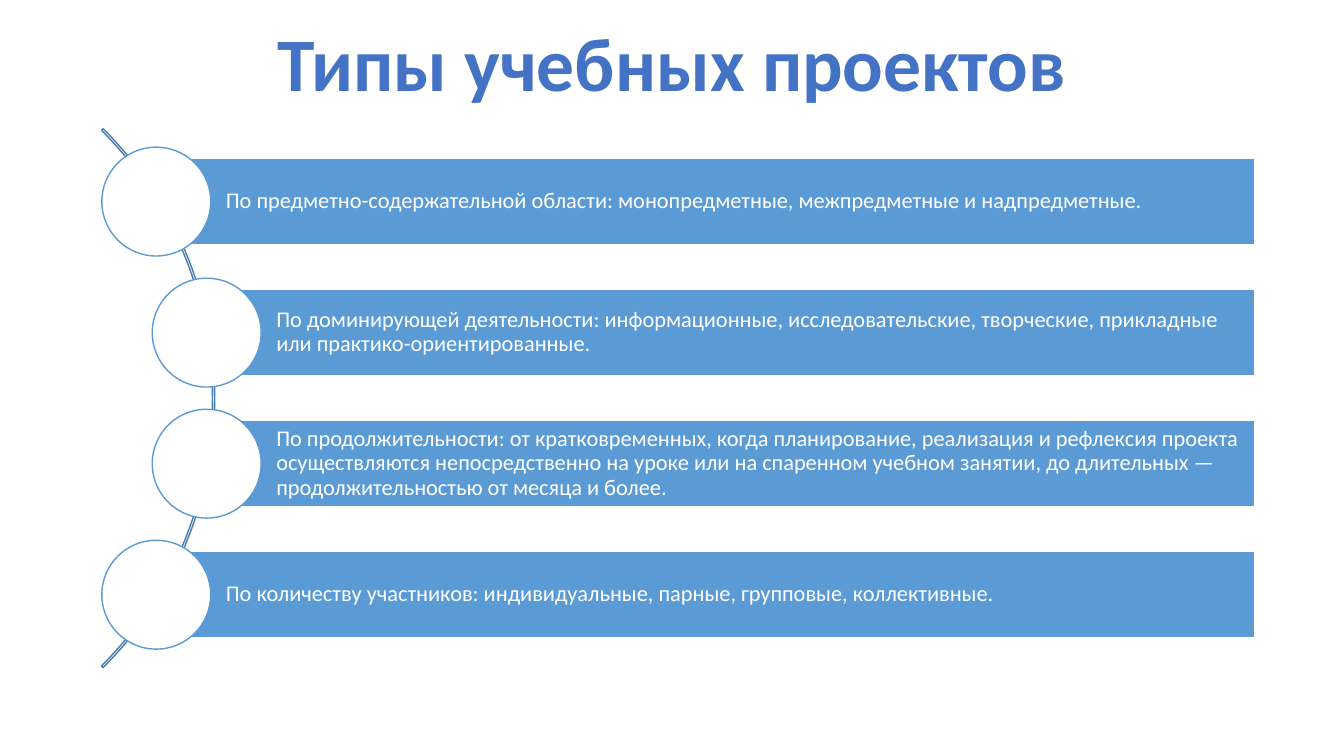
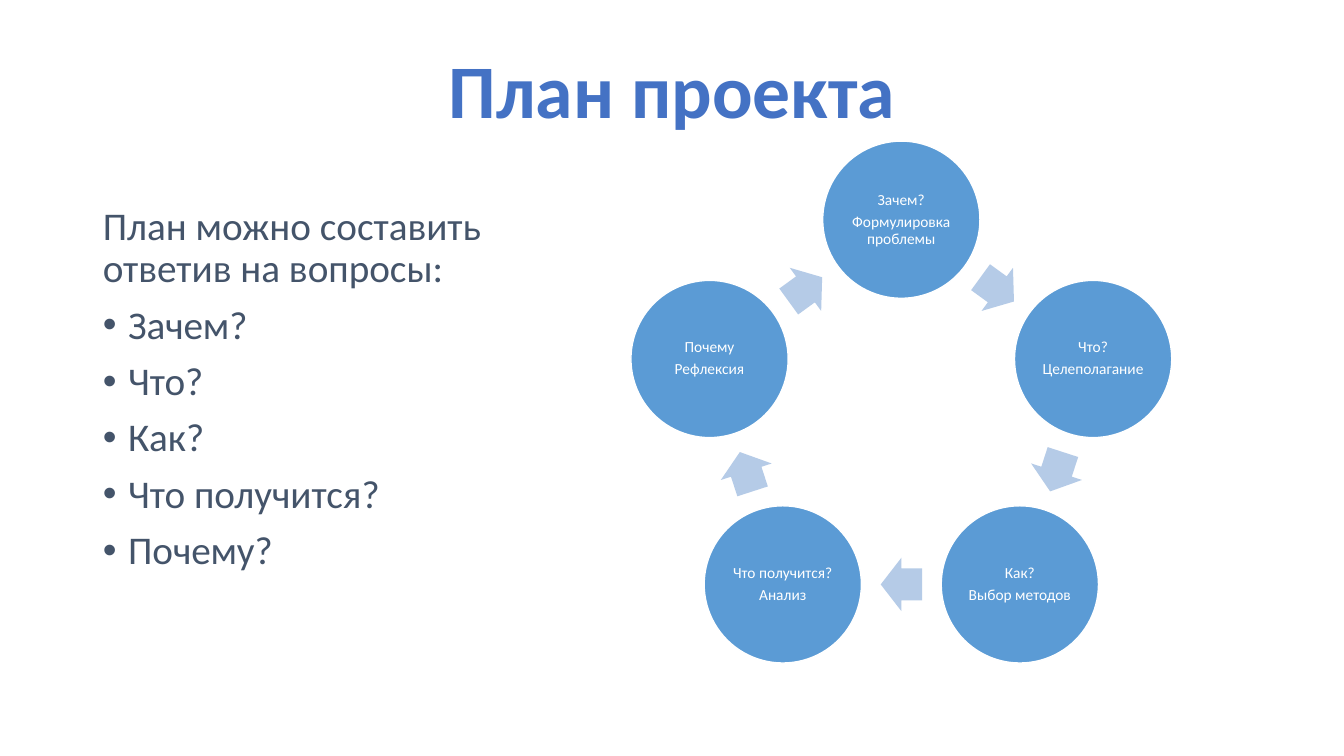
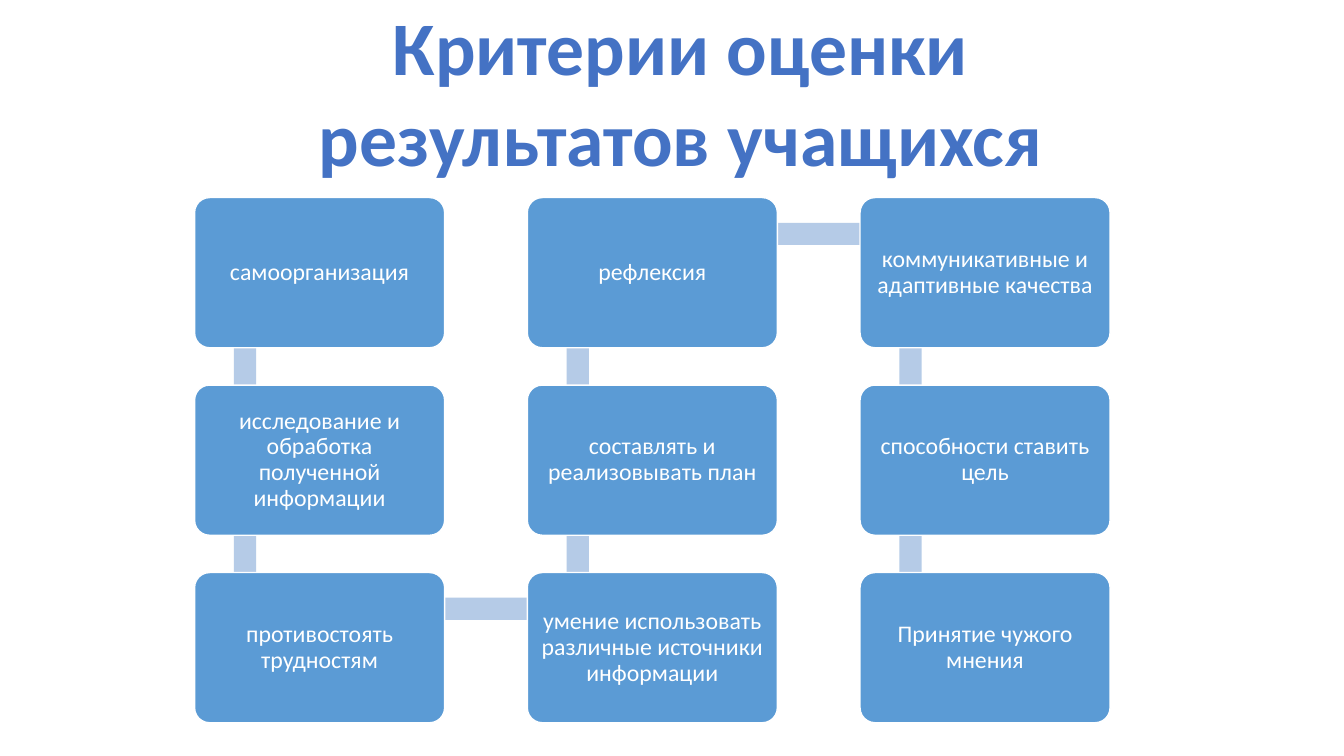
import math

import pptx
import pptx.dml.color
import pptx.enum.shapes
import pptx.enum.text
import pptx.util

Inches, Pt = pptx.util.Inches, pptx.util.Pt
SHAPE = pptx.enum.shapes.MSO_SHAPE
ALIGN = pptx.enum.text.PP_ALIGN
ANCHOR = pptx.enum.text.MSO_ANCHOR
AUTOSIZE = pptx.enum.text.MSO_AUTO_SIZE

# Shared style
WIDTH, HEIGHT = 13.33, 7.5
FONT = "Calibri"
COLORS = {
    "title": "4472C4",
    "body": "44546A",
    "accent": "5B9BD5",
    "pale": "B5CBE7",
    "arc": "497CAB",
    "white": "FFFFFF",
}
TITLE_ONLY, TITLE_AND_BODY = 5, 1

# Content
PROJECT_TYPES = [
    "По предметно-содержательной области: монопредметные, межпредметные и надпредметные.",
    "По доминирующей деятельности: информационные, исследовательские, творческие, "
    "прикладные или практико-ориентированные.",
    "По продолжительности: от кратковременных, когда планирование, реализация и рефлексия "
    "проекта осуществляются непосредственно на уроке или на спаренном учебном занятии, "
    "до длительных — продолжительностью от месяца и более.",
    "По количеству участников: индивидуальные, парные, групповые, коллективные.",
]
PLAN_INTRO = "План можно составить ответив на вопросы:"
PLAN_QUESTIONS = ["Зачем?", "Что?", "Как?", "Что получится?", "Почему?"]
PLAN_STAGES = [
    ["Зачем?", "Формулировка проблемы"],
    ["Что?", "Целеполагание"],
    ["Как?", "Выбор методов"],
    ["Что получится?", "Анализ"],
    ["Почему", "Рефлексия"],
]
CRITERIA = [
    ["самоорганизация", "рефлексия", "коммуникативные и адаптивные качества"],
    ["исследование и обработка полученной информации", "составлять и реализовывать план",
     "способности ставить цель"],
    ["противостоять трудностям", "умение использовать различные источники информации",
     "Принятие чужого мнения"],
]


def rgb(name):
    return pptx.dml.color.RGBColor.from_string(COLORS[name])


def style(p, size, color, align=ALIGN.LEFT, spacing=0.9):
    p.font.name, p.font.size = FONT, Pt(size)
    p.font.color.rgb = rgb(color)
    p.alignment, p.line_spacing = align, spacing


def place(sp, left, top, width, height):
    sp.left, sp.top = Inches(left), Inches(top)
    sp.width, sp.height = Inches(width), Inches(height)


def add_titled_slide(prs, layout, lines, center_y, center_x=WIDTH / 2):
    """Add a slide whose title is centred on the given point."""
    slide = prs.slides.add_slide(prs.slide_layouts[layout])
    title = slide.shapes.title
    width, height = 10, 0.1 + 0.91 * len(lines)
    place(title, center_x - width / 2, center_y - height / 2, width, height)
    tf = title.text_frame
    tf.text = "\n".join(lines)
    tf.word_wrap, tf.auto_size = True, AUTOSIZE.NONE
    tf.vertical_anchor = ANCHOR.MIDDLE
    for p in tf.paragraphs:
        style(p, 54, "title", ALIGN.CENTER, 1.0)
        p.font.bold = True
    return slide


def add_shape(slide, kind, box, fill=None, line=None, adjust=()):
    sp = slide.shapes.add_shape(kind, *(Inches(v) for v in box))
    sp.shadow.inherit = False
    for i, value in enumerate(adjust):
        sp.adjustments[i] = value
    if fill:
        sp.fill.solid()
        sp.fill.fore_color.rgb = rgb(fill)
    else:
        sp.fill.background()
    if line:
        sp.line.color.rgb = rgb(line)
        sp.line.width = Pt(1)
    else:
        sp.line.fill.background()
    return sp


def add_label(sp, lines, size, margin, left=None, align=ALIGN.CENTER):
    """Write white paragraphs inside a shape."""
    tf = sp.text_frame
    tf.text = "\n".join(lines)
    tf.word_wrap, tf.vertical_anchor = True, ANCHOR.MIDDLE
    tf.margin_top = tf.margin_right = tf.margin_bottom = Inches(margin)
    tf.margin_left = Inches(margin if left is None else left)
    for p in tf.paragraphs:
        style(p, size, "white", align)
        p.space_after = Pt(0.35 * size)


def add_question_list(slide, intro, questions):
    body = slide.placeholders[1]
    place(body, 0.92, 2, 4.21, 4.76)
    tf = body.text_frame
    tf.text = "\n".join([intro] + questions)
    tf.auto_size = AUTOSIZE.NONE
    for i, p in enumerate(tf.paragraphs):
        style(p, 28, "body")
        p.space_before = Pt(10)
        indent = Inches(0.25) if i else 0
        pPr = p._p.get_or_add_pPr()
        pPr.set("marL", str(indent))
        pPr.set("indent", str(-indent))
        if i:
            bullet = pptx.oxml.parse_xml(
                '<a:buChar xmlns:a="http://schemas.openxmlformats.org/drawingml/2006/main" char="•"/>')
        else:
            bullet = pptx.oxml.parse_xml(
                '<a:buNone xmlns:a="http://schemas.openxmlformats.org/drawingml/2006/main"/>')
        pPr.insert_element_before(bullet, "a:tabLst", "a:defRPr", "a:extLst")


def add_types_slide(prs):
    slide = add_titled_slide(prs, TITLE_ONLY, ["Типы учебных проектов"], 0.61)
    add_shape(slide, SHAPE.BLOCK_ARC, (-5.43, 0.17, 7.56, 7.56), line="arc",
              adjust=(189, 27, 0.003))
    right, bar_h, circle = 12.44, 0.86, 1.08
    for i, text in enumerate(PROJECT_TYPES):
        left = 2.05 if i in (1, 2) else 1.55
        middle = 2 + 1.3 * i
        bar = add_shape(slide, SHAPE.RECTANGLE,
                        (left, middle - bar_h / 2, right - left, bar_h), "accent", "white")
        add_label(bar, [text], 16, 0.04, left=0.69, align=ALIGN.LEFT)
        add_shape(slide, SHAPE.OVAL,
                  (left - circle / 2, middle - circle / 2, circle, circle), "white", "accent")


def add_plan_slide(prs):
    slide = add_titled_slide(prs, TITLE_AND_BODY, ["План проекта"], 0.88)
    add_question_list(slide, PLAN_INTRO, PLAN_QUESTIONS)

    # Ring of stages, clockwise from the top
    center_x, center_y, radius = 8.94, 4.18, 2
    step = 360 / len(PLAN_STAGES)

    def ring_box(angle, distance, width, height):
        x = center_x + distance * math.sin(math.radians(angle))
        y = center_y - distance * math.cos(math.radians(angle))
        return x - width / 2, y - height / 2, width, height

    for i, lines in enumerate(PLAN_STAGES):
        angle = i * step
        stage = add_shape(slide, SHAPE.OVAL, ring_box(angle, radius, 1.56, 1.56),
                          "accent", "white")
        add_label(stage, lines, 11, 0.02)
        midpoint = radius * math.cos(math.radians(step / 2))
        arrow = add_shape(slide, SHAPE.RIGHT_ARROW,
                          ring_box(angle + step / 2, midpoint, 0.41, 0.53),
                          "pale", adjust=(0.6, 0.5))
        arrow.rotation = angle + step / 2


def add_criteria_slide(prs):
    slide = add_titled_slide(prs, TITLE_ONLY, ["Критерии оценки", "результатов учащихся"],
                             0.9, 6.75)
    col_step, row_step, band = 3.3, 1.86, 0.22

    def cell(row, col):
        return 1.93 + col * col_step, 1.96 + row * row_step

    # Links run down, up and down the columns, behind the boxes
    for col in range(3):
        for row in range(2):
            x, y = cell(row, col)
            add_shape(slide, SHAPE.RECTANGLE, (x + 0.39, y + 0.36, band, row_step), "pale")
    for row, col in ((2, 0), (0, 1)):
        x, y = cell(row, col)
        add_shape(slide, SHAPE.RECTANGLE, (x + 0.5, y + 0.25, col_step, band), "pale")

    for row, texts in enumerate(CRITERIA):
        for col, text in enumerate(texts):
            box = add_shape(slide, SHAPE.ROUNDED_RECTANGLE, (*cell(row, col), 2.48, 1.49),
                            "accent", "white", adjust=(0.1,))
            add_label(box, [text], 17, 0.07)


def main():
    prs = pptx.Presentation()
    prs.slide_width, prs.slide_height = Inches(WIDTH), Inches(HEIGHT)
    add_types_slide(prs)
    add_plan_slide(prs)
    add_criteria_slide(prs)
    prs.save("out.pptx")


if __name__ == "__main__":
    main()
